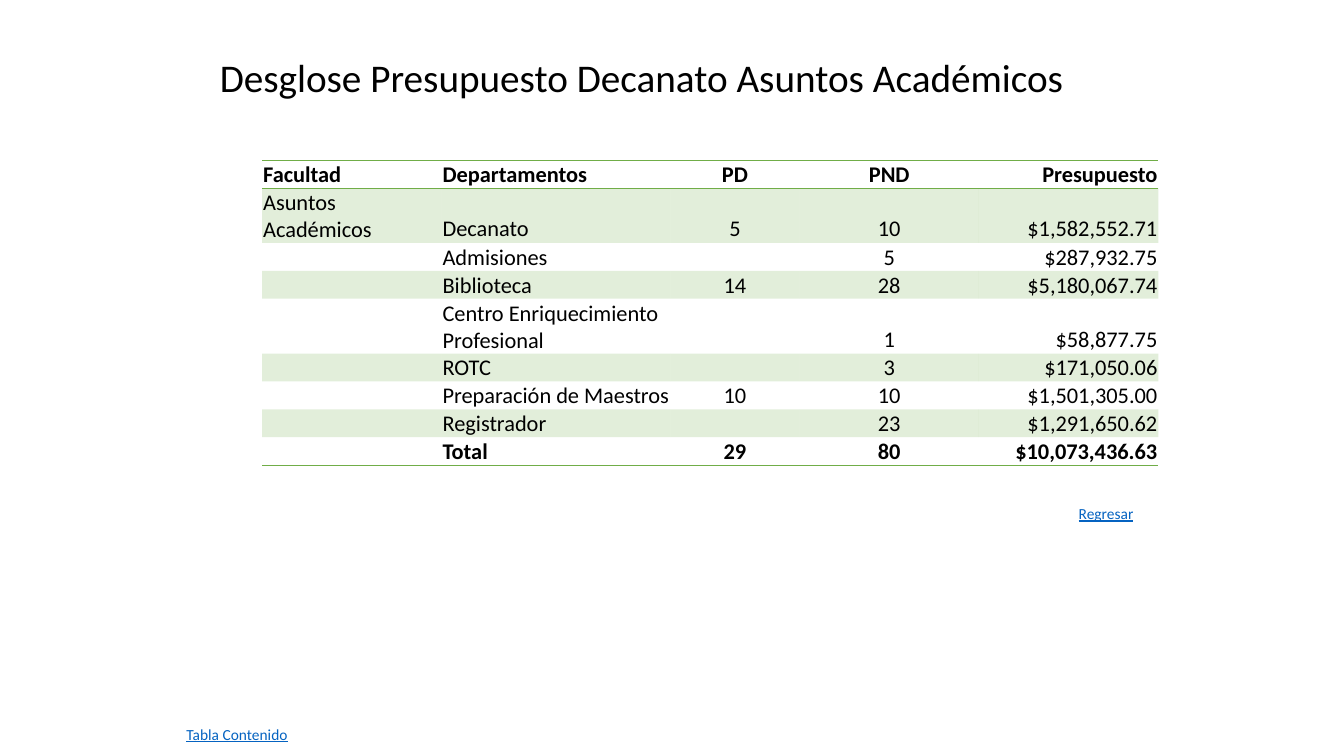
import pptx
import pptx.dml.color
import pptx.enum.text
import pptx.oxml
import pptx.oxml.ns
import pptx.util

PX = 9144
FONT = "Calibri"
BLACK = pptx.dml.color.RGBColor(0x00, 0x00, 0x00)
GREEN = pptx.dml.color.RGBColor(0x70, 0xAD, 0x47)
LINK_BLUE = pptx.dml.color.RGBColor(0x05, 0x63, 0xC1)
LEFT, CENTER, RIGHT = (
    pptx.enum.text.PP_ALIGN.LEFT,
    pptx.enum.text.PP_ALIGN.CENTER,
    pptx.enum.text.PP_ALIGN.RIGHT,
)
PLAIN_TABLE_STYLE = "{2D5ABB26-0587-4C30-8999-92F81FD0307C}"
COLUMN_WIDTHS = [178, 227, 128, 178, 178]
COLUMN_ALIGNMENTS = [LEFT, LEFT, CENTER, CENTER, RIGHT]
LINE_HEIGHT = 27
BUDGET = [
    ["Facultad", "Departamentos", "PD", "PND", "Presupuesto"],
    ["Asuntos Académicos", "Decanato", "5", "10", "$1,582,552.71"],
    ["", "Admisiones", "", "5", "$287,932.75"],
    ["", "Biblioteca", "14", "28", "$5,180,067.74"],
    ["", "Centro Enriquecimiento Profesional", "", "1", "$58,877.75"],
    ["", "ROTC", "", "3", "$171,050.06"],
    ["", "Preparación de Maestros", "10", "10", "$1,501,305.00"],
    ["", "Registrador", "", "23", "$1,291,650.62"],
    ["", "Total", "29", "80", "$10,073,436.63"],
]
TWO_LINE_ROWS = {1, 4}


def px(length):
    return pptx.util.Emu(length * PX)


def format_paragraph(para, size, color, align=LEFT, bold=False, underline=False):
    para.alignment = align
    font = para.font
    font.name = FONT
    font.size = pptx.util.Pt(size)
    font.color.rgb = color
    font.bold = bold
    font.underline = underline


def add_title(page, left, top, width, height):
    title = page.shapes.title
    title.left, title.top, title.width, title.height = map(px, (left, top, width, height))
    frame = title.text_frame
    frame.text = "Desglose Presupuesto Decanato Asuntos Académicos"
    frame.word_wrap = False
    frame.auto_size = pptx.enum.text.MSO_AUTO_SIZE.SHAPE_TO_FIT_TEXT
    frame.vertical_anchor = pptx.enum.text.MSO_ANCHOR.TOP
    format_paragraph(frame.paragraphs[0], 28, BLACK)


def add_link_label(page, text, left, top, width, height):
    box = page.shapes.add_textbox(*map(px, (left, top, width, height)))
    frame = box.text_frame
    frame.text = text
    frame.word_wrap = False
    frame.auto_size = pptx.enum.text.MSO_AUTO_SIZE.SHAPE_TO_FIT_TEXT
    format_paragraph(frame.paragraphs[0], 11, LINK_BLUE, underline=True)


def add_border(cell, side):
    border = pptx.oxml.parse_xml(
        f'<a:{side} {pptx.oxml.ns.nsdecls("a")} w="12700"><a:solidFill>'
        f'<a:srgbClr val="{GREEN}"/></a:solidFill></a:{side}>'
    )
    cell._tc.get_or_add_tcPr().append(border)


def fill_cell(cell, banded):
    if not banded:
        cell.fill.background()
        return
    cell.fill.solid()
    cell.fill.fore_color.rgb = GREEN
    color = cell._tc.tcPr.find(".//" + pptx.oxml.ns.qn("a:srgbClr"))
    color.append(
        pptx.oxml.parse_xml(f'<a:alpha {pptx.oxml.ns.nsdecls("a")} val="20000"/>')
    )


def write_cell(cell, text, align, bold):
    cell.text = text
    cell.vertical_anchor = pptx.enum.text.MSO_ANCHOR.BOTTOM
    cell.margin_left = cell.margin_right = cell.margin_top = px(1)
    cell.margin_bottom = 0
    para = cell.text_frame.paragraphs[0]
    format_paragraph(para, 16, BLACK, align, bold)
    if not text:
        para._p.append(
            pptx.oxml.parse_xml(f'<a:endParaRPr {pptx.oxml.ns.nsdecls("a")} sz="1600"/>')
        )


def add_budget_table(page, left, top):
    last = len(BUDGET) - 1
    heights = [LINE_HEIGHT * (2 if row in TWO_LINE_ROWS else 1) for row in range(last + 1)]
    frame = page.shapes.add_table(
        len(BUDGET), len(COLUMN_WIDTHS),
        px(left), px(top), px(sum(COLUMN_WIDTHS)), px(sum(heights)),
    )
    table = frame.table
    table.first_row = table.horz_banding = False
    table._tbl.tblPr.find(pptx.oxml.ns.qn("a:tableStyleId")).text = PLAIN_TABLE_STYLE
    for column, width in zip(table.columns, COLUMN_WIDTHS):
        column.width = px(width)
    for row, values in enumerate(BUDGET):
        table.rows[row].height = px(heights[row])
        for column, (text, align) in enumerate(zip(values, COLUMN_ALIGNMENTS)):
            cell = table.cell(row, column)
            write_cell(cell, text, align, row in (0, last))
            if row == 0:
                add_border(cell, "lnT")
            if row in (0, last):
                add_border(cell, "lnB")
            fill_cell(cell, row % 2 == 1)


def main():
    deck = pptx.Presentation()
    deck.slide_width, deck.slide_height = px(1333), px(750)
    page = deck.slides.add_slide(deck.slide_layouts[5])
    add_budget_table(page, 260, 159)
    add_title(page, 208, 48, 875, 57)
    add_link_label(page, "Regresar", 1060, 495, 75, 29)
    add_link_label(page, "Tabla Contenido", 175, 714, 122, 29)
    deck.save("out.pptx")


if __name__ == "__main__":
    main()
